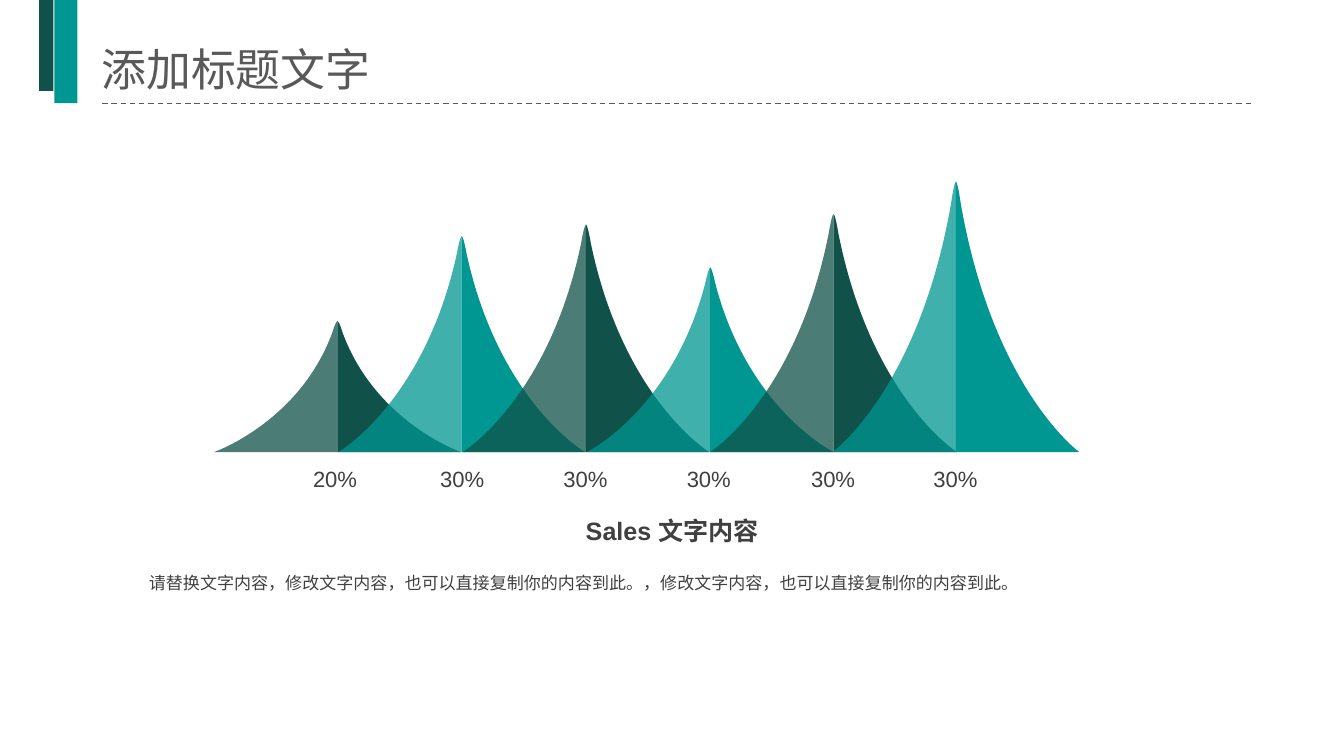
from lxml.etree import SubElement
from pptx import Presentation
from pptx.dml.color import RGBColor
from pptx.enum.dml import MSO_LINE
from pptx.enum.shapes import MSO_CONNECTOR, MSO_SHAPE
from pptx.enum.text import MSO_ANCHOR, PP_ALIGN
from pptx.oxml.ns import qn
from pptx.util import Inches, Pt

DARK, TEAL, GREY, TEXT = "105249", "009692", "595959", "404040"

TITLE = "添加标题文字"
CAPTION = "Sales 文字内容"
BODY = "请替换文字内容，修改文字内容，也可以直接复制你的内容到此。，修改文字内容，也可以直接复制你的内容到此。"
# centre, height, colour, label, left of label
PEAKS = [
    (3.53, 1.37, DARK, "20%", 3.12),
    (4.83, 2.26, TEAL, "30%", 4.45),
    (6.13, 2.38, DARK, "30%", 5.74),
    (7.43, 1.93, TEAL, "30%", 7.03),
    (8.72, 2.49, DARK, "30%", 8.33),
    (10, 2.83, TEAL, "30%", 9.61),
]
# left, width, height, colour
BARS = [(0.41, 0.15, 0.95, DARK), (0.57, 0.24, 1.08, TEAL)]

BASE, HALF_WIDTH = 4.73, 1.29
# Bezier points of half a peak, as (distance from centre, share of peak height)
SHOULDER, FOOT, MIDDLE, TIP = (0.05, 0.92), (HALF_WIDTH, 0), (0, 0), (0, 1)
HALF_PEAK = [(0.39, 0.23), FOOT, FOOT, MIDDLE, MIDDLE, MIDDLE,
             TIP, TIP, TIP, (0.01, 1), (0.03, 0.97), SHOULDER]


def color(value):
    return RGBColor.from_string(value)


def paint(shape, fill, opacity=100):
    shape.shadow.inherit = False
    shape.fill.solid()
    shape.fill.fore_color.rgb = color(fill)
    shape.line.fill.background()
    if opacity < 100:
        clr = next(shape._element.spPr.iter(qn("a:srgbClr")))
        SubElement(clr, qn("a:alpha"), val=str(opacity * 1000))


def bend(shape):
    """Turn every three straight segments of the outline into one Bezier curve."""
    segments = list(shape._element.spPr.iter(qn("a:lnTo")))
    for first in range(0, len(segments), 3):
        curve = segments[first].makeelement(qn("a:cubicBezTo"))
        segments[first].addprevious(curve)
        for segment in segments[first:first + 3]:
            curve.append(segment[0])
            segment.getparent().remove(segment)


def add_half_peak(page, centre, height, side, fill, opacity):
    """Draw one half of a peak; side is -1 for left and 1 for right."""
    start, *outline = [(Inches(centre + side * x), Inches(BASE - height * y))
                       for x, y in [SHOULDER] + HALF_PEAK]
    builder = page.shapes.build_freeform(*start, scale=1.0)
    builder.add_line_segments(outline, close=True)
    half = builder.convert_to_shape()
    bend(half)
    paint(half, fill, opacity)


def write(box, text, size, fill=TEXT, font="Arial", bold=False, align=PP_ALIGN.LEFT,
          spacing=1.2, anchor=MSO_ANCHOR.TOP, inset=(0.1, 0.05), wrap=True):
    frame = box.text_frame
    side, top = map(Inches, inset)
    layout = {"word_wrap": wrap, "vertical_anchor": anchor, "margin_left": side,
              "margin_right": side, "margin_top": top, "margin_bottom": top}
    for name, value in layout.items():
        setattr(frame, name, value)
    para = frame.paragraphs[0]
    para.alignment, para.line_spacing = align, spacing
    span = para.add_run()
    span.text = text
    for name, value in {"name": font, "size": Pt(size), "bold": bold}.items():
        setattr(span.font, name, value)
    span.font.color.rgb = color(fill)
    SubElement(span._r.get_or_add_rPr(), qn("a:ea"), typeface="Noto Sans CJK SC")


def add_text(page, left, top, width, height, text, size, **formats):
    box = page.shapes.add_textbox(*map(Inches, (left, top, width, height)))
    write(box, text, size, **formats)


def main():
    deck = Presentation()
    deck.slide_width, deck.slide_height = Inches(14.06), Inches(7.91)
    page = deck.slides.add_slide(deck.slide_layouts[5])

    for centre, height, fill, label, left in PEAKS:
        add_half_peak(page, centre, height, -1, fill, 75)
        add_half_peak(page, centre, height, 1, fill, 100)
    for centre, height, fill, label, left in PEAKS:
        add_text(page, left, 4.73, 0.77, 0.49, label, 16.6,
                 align=PP_ALIGN.CENTER, inset=(0.15, 0.08), wrap=False)

    add_text(page, 5.92, 5.34, 2.23, 0.35, CAPTION, 18.9, bold=True,
             align=PP_ALIGN.CENTER, anchor=MSO_ANCHOR.MIDDLE, inset=(0.2, 0))
    add_text(page, 1.46, 5.83, 11.14, 0.42, BODY, 12.8, spacing=1.5)

    title = page.shapes.title
    title.left, title.top, title.width, title.height = map(Inches, (0.96, 0.44, 7.05, 0.63))
    write(title, TITLE, 33.8, fill=GREY, font="Noto Sans CJK SC", spacing=0.9,
          anchor=MSO_ANCHOR.MIDDLE)

    for left, width, height, fill in BARS:
        bar = page.shapes.add_shape(MSO_SHAPE.RECTANGLE, Inches(left), 0,
                                    Inches(width), Inches(height))
        paint(bar, fill)

    rule = page.shapes.add_connector(MSO_CONNECTOR.STRAIGHT,
                                     *map(Inches, (1.07, 1.08, 13.1, 1.08)))
    rule.line.color.rgb = color(GREY)
    rule.line.width, rule.line.dash_style = Pt(1), MSO_LINE.DASH
    SubElement(rule._element.spPr, qn("a:effectLst"))

    deck.save("out.pptx")


if __name__ == "__main__":
    main()
